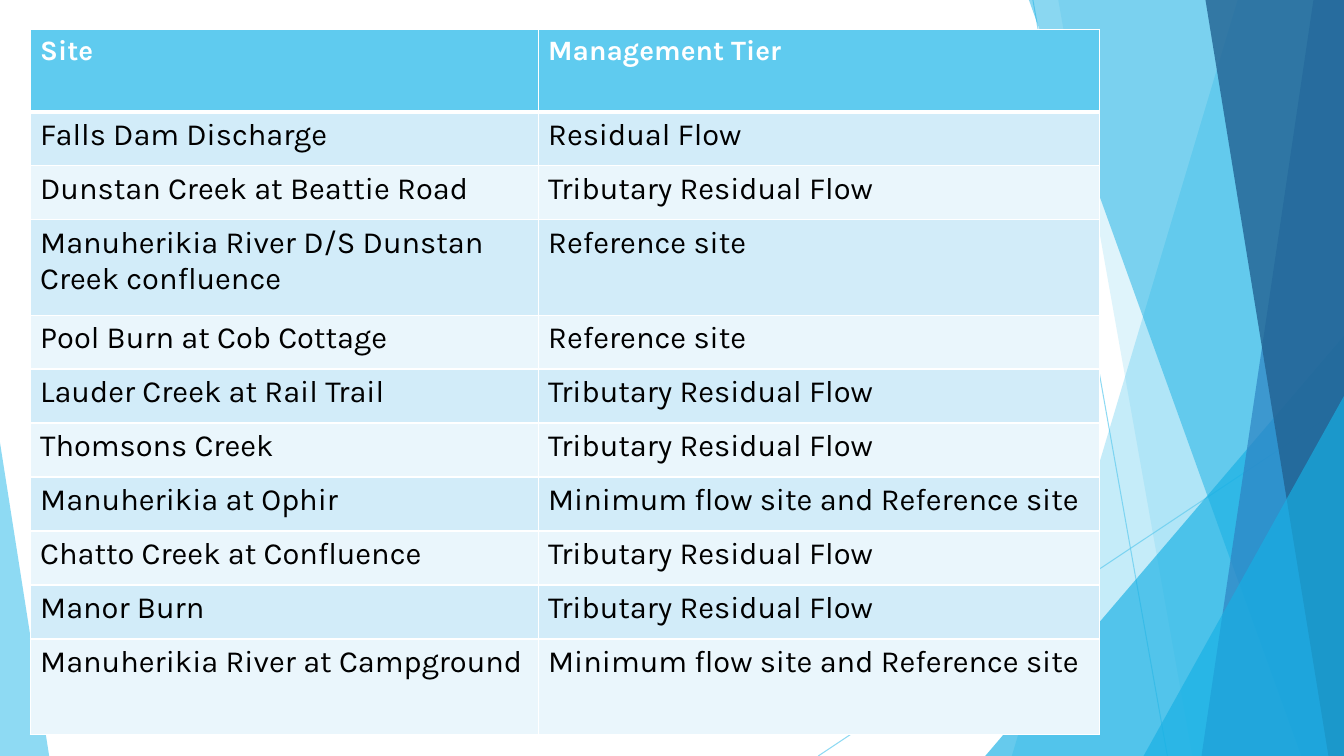
import pptx
import pptx.util
import pptx.dml.color
import pptx.enum.shapes
import pptx.oxml.ns
from lxml import etree

Cm = pptx.util.Cm
Pt = pptx.util.Pt
qn = pptx.oxml.ns.qn
KIND = pptx.enum.shapes.MSO_SHAPE
WIDE, HIGH = 33.87, 19.05

HUES = {
    "sky": "5FCBEF", "aqua": "17B0E4", "blue": "2E83C3", "navy": "226292",
    "pale": "D2ECF9", "faint": "EAF6FC", "white": "FFFFFF", "black": "000000",
}

SITES = [
    ("Site", "Management Tier"),
    ("Falls Dam Discharge", "Residual Flow"),
    ("Dunstan Creek at Beattie Road", "Tributary Residual Flow"),
    ("Manuherikia River D/S Dunstan Creek confluence", "Reference site"),
    ("Pool Burn at Cob Cottage", "Reference site"),
    ("Lauder Creek at Rail Trail", "Tributary Residual Flow"),
    ("Thomsons Creek", "Tributary Residual Flow"),
    ("Manuherikia at Ophir", "Minimum flow site and Reference site"),
    ("Chatto Creek at Confluence", "Tributary Residual Flow"),
    ("Manor Burn", "Tributary Residual Flow"),
    ("Manuherikia River at Campground", "Minimum flow site and Reference site"),
]
TALL = {0: 2.08, 3: 2.4, 10: 2.4}  # rows that differ from the usual height


def rgb(hue):
    return pptx.dml.color.RGBColor.from_string(HUES[hue])


def fade(fill, share):
    """Make a solid fill or line see-through; share is its opacity in percent."""
    tint = fill._xPr.find(qn("a:solidFill"))[0]
    etree.SubElement(tint, qn("a:alpha"), val=str(share * 1000))


def paint(shape, hue, share):
    shape.shadow.inherit = False
    shape.fill.solid()
    shape.fill.fore_color.rgb = rgb(hue)
    fade(shape.fill, share)
    shape.line.fill.background()


def write(frame, text, size=22, hue="black", bold=False, face="Karla"):
    run = frame.paragraphs[0].add_run()
    run.text = text
    font = run.font
    font.name, font.size, font.bold = face, Pt(size), bold
    font.color.rgb = rgb(hue)


def ray(slide, ends):
    line = slide.shapes.add_connector(
        pptx.enum.shapes.MSO_CONNECTOR.STRAIGHT, *map(Cm, ends))
    line.line.width = Pt(0.75)
    line.line.color.rgb = rgb("sky")
    fade(line.line.fill, 70)
    etree.SubElement(line._element.spPr, qn("a:effectLst"))


def shard(slide, box, top, foot, hue, share):
    """Slanted band that runs to the right edge of the box."""
    left, head, wide, high = box
    right, base = left + wide, head + high
    start, *rest = [(Cm(x), Cm(y)) for x, y in (
        (left + top, head), (right, head), (right, base), (left + foot, base))]
    pen = slide.shapes.build_freeform(*start)
    pen.add_line_segments(rest, close=True)
    paint(pen.convert_to_shape(), hue, share)


def wedge(slide, box, wide, high, hue, share, tip):
    """Triangle in a bottom corner of the box: tip 0 is left, 1 is right."""
    left = box[0] + tip * (box[2] - wide)
    top = box[1] + box[3] - high
    shape = slide.shapes.add_shape(
        KIND.ISOSCELES_TRIANGLE, Cm(left), Cm(top), Cm(wide), Cm(high))
    shape.adjustments[0] = tip
    paint(shape, hue, share)


def facets(slide, box):
    left, top, wide, high = box
    # Thin rays
    ray(slide, (left + 26.03, top, left + 29.42, top + high))
    ray(slide, (left + wide, top + 10.24, left + 20.62, top + high))
    # Bands and corners, back to front
    shard(slide, box, 31.19, 25.5, "sky", 36)
    shard(slide, box, 26.67, 30.05, "sky", 20)
    wedge(slide, box, 9.04, 10.59, "aqua", 66, 1)
    shard(slide, box, 25.93, 32.79, "aqua", 50)
    shard(slide, box, 33.1, 30.28, "blue", 70)
    shard(slide, box, 30.38, 33.48, "navy", 80)
    wedge(slide, box, 5.05, 9.07, "aqua", 66, 1)
    wedge(slide, box, 1.24, 7.9, "sky", 70, 0)


def edge(cell, **sides):
    """White cell borders, with a width in points for each side."""
    props = cell._tc.get_or_add_tcPr()
    for side, width in sides.items():
        line = etree.SubElement(props, qn("a:ln" + side), w=str(Pt(width)))
        fill = etree.SubElement(line, qn("a:solidFill"))
        etree.SubElement(fill, qn("a:srgbClr"), val=HUES["white"])


def tiers(slide, box):
    grid = slide.shapes.add_table(len(SITES), 2, *map(Cm, box)).table
    for col, share in zip(grid.columns, (0.475, 0.525)):
        col.width = Cm(box[2] * share)
    for i, texts in enumerate(SITES):
        grid.rows[i].height = Cm(TALL.get(i, 1.36))
        hue = "sky" if i == 0 else "pale" if i % 2 else "faint"
        style = dict(size=20, hue="white", bold=True) if i == 0 else {}
        for j, text in enumerate(texts):
            cell = grid.cell(i, j)
            edge(cell, L=1, R=1, T=3 if i == 1 else 1, B=3 if i == 0 else 1)
            cell.fill.solid()
            cell.fill.fore_color.rgb = rgb(hue)
            write(cell.text_frame, text, **style)


def main():
    deck = pptx.Presentation()
    deck.slide_width, deck.slide_height = Cm(WIDE), Cm(HIGH)
    slide = deck.slides.add_slide(deck.slide_layouts[6])
    facets(slide, (0, 0, WIDE, HIGH))
    tiers(slide, (0.76, 0.74, 26.95, 17.76))
    deck.save("out.pptx")


if __name__ == "__main__":
    main()
